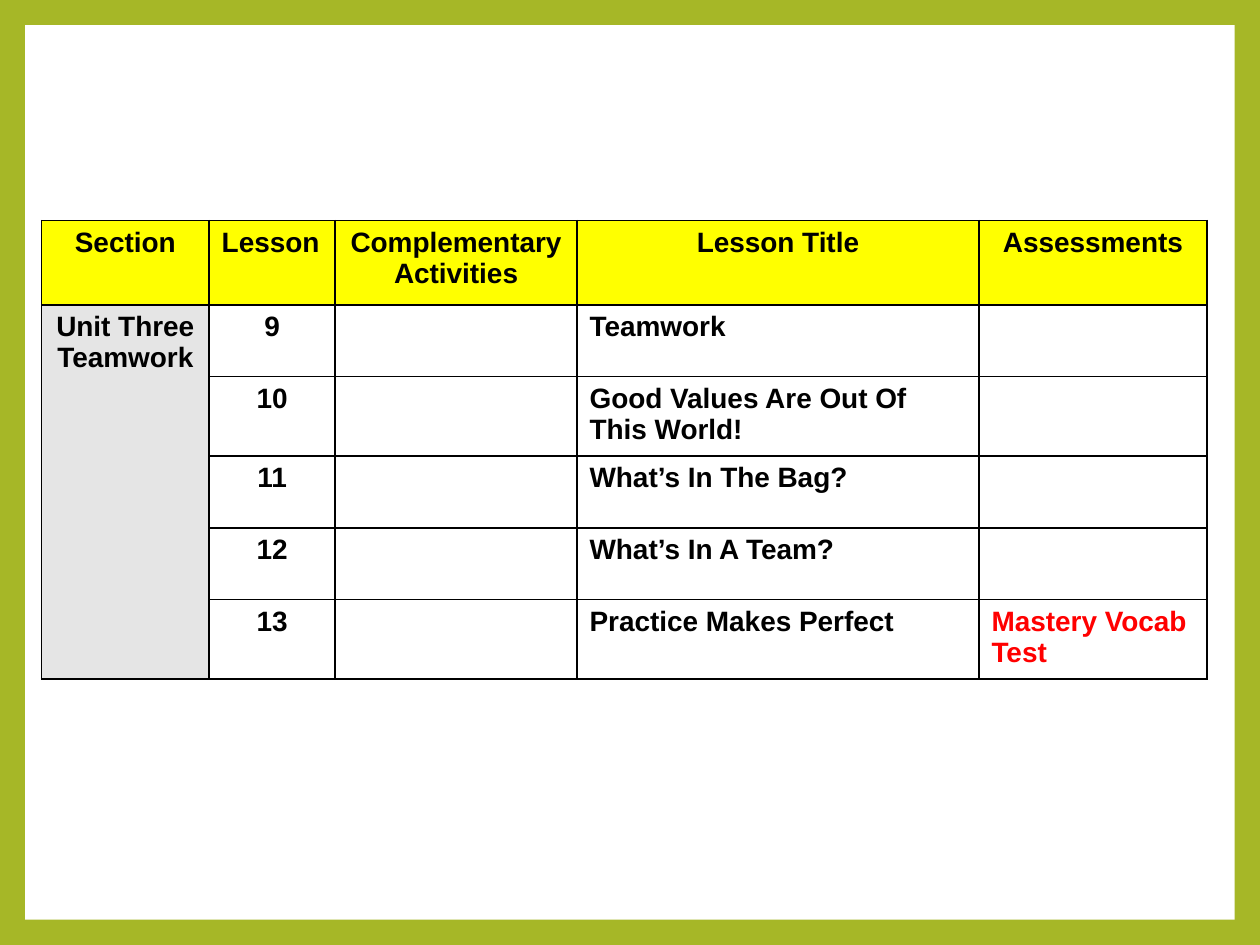
from lxml import etree
from pptx import Presentation
from pptx.dml.color import RGBColor
from pptx.enum.shapes import MSO_SHAPE
from pptx.enum.text import PP_ALIGN
from pptx.oxml.ns import qn
from pptx.util import Inches, Pt

RECTANGLE = MSO_SHAPE.RECTANGLE
LEFT, CENTER = PP_ALIGN.LEFT, PP_ALIGN.CENTER

GREEN = RGBColor(0xA6, 0xB7, 0x27)
WHITE = RGBColor(0xFF, 0xFF, 0xFF)
YELLOW = RGBColor(0xFF, 0xFF, 0x00)
GRAY = RGBColor(0xE5, 0xE5, 0xE5)
BLACK = RGBColor(0x00, 0x00, 0x00)
RED = RGBColor(0xFF, 0x00, 0x00)

PAGE_WIDTH, PAGE_HEIGHT, FRAME = 10, 7.5, 0.2
COLUMN_WIDTHS = [1.33, 1, 1.92, 3.19, 1.81]
ROW_HEIGHTS = [0.67, 0.57, 0.63, 0.57, 0.57, 0.63]
HEADINGS = ["Section", "Lesson", "Complementary Activities", "Lesson Title", "Assessments"]
UNIT = "Unit Three\nTeamwork"
LESSONS = [
    ("9", "Teamwork", ""),
    ("10", "Good Values Are Out Of This World!", ""),
    ("11", "What’s In The Bag?", ""),
    ("12", "What’s In A Team?", ""),
    ("13", "Practice Makes Perfect", "Mastery Vocab Test"),
]


def add_panel(page, left, top, width, height):
    panel = page.shapes.add_shape(
        RECTANGLE, Inches(left), Inches(top), Inches(width), Inches(height))
    panel.shadow.inherit = False
    panel.fill.solid()
    panel.fill.fore_color.rgb = WHITE
    panel.line.fill.background()


def add_borders(cell):
    properties = cell._tc.get_or_add_tcPr()
    for side in ("a:lnL", "a:lnR", "a:lnT", "a:lnB"):
        line = etree.SubElement(properties, qn(side), w=str(Pt(1)))
        solid = etree.SubElement(line, qn("a:solidFill"))
        etree.SubElement(solid, qn("a:srgbClr"), val=str(BLACK))


def style_cell(cell, fill):
    """Border the cell and fill it; a fill of None leaves it clear."""
    add_borders(cell)
    if fill is None:
        cell.fill.background()
    else:
        cell.fill.solid()
        cell.fill.fore_color.rgb = fill


def write_cell(cell, text, align, color=BLACK):
    cell.text_frame.text = text
    for para in cell.text_frame.paragraphs:
        para.alignment = align
        for span in para.runs:
            span.font.name = "Arial"
            span.font.size = Pt(16)
            span.font.bold = True
            span.font.color.rgb = color


def add_lesson_table(page, left, top, width, height):
    table = page.shapes.add_table(
        len(ROW_HEIGHTS), len(COLUMN_WIDTHS),
        Inches(left), Inches(top), Inches(width), Inches(height)).table
    table.first_row = False
    table.horz_banding = False
    for column, share in zip(table.columns, COLUMN_WIDTHS):
        column.width = Inches(width * share / sum(COLUMN_WIDTHS))
    for row, share in zip(table.rows, ROW_HEIGHTS):
        row.height = Inches(height * share / sum(ROW_HEIGHTS))

    for row_index, row in enumerate(table.rows):
        for column_index, cell in enumerate(row.cells):
            body_fill = GRAY if column_index == 0 else None
            style_cell(cell, YELLOW if row_index == 0 else body_fill)

    for column_index, heading in enumerate(HEADINGS):
        align = LEFT if heading == "Lesson" else CENTER
        write_cell(table.cell(0, column_index), heading, align)

    unit_cell = table.cell(1, 0)
    unit_cell.merge(table.cell(len(LESSONS), 0))
    write_cell(unit_cell, UNIT, CENTER)

    for row_index, (number, title, assessment) in enumerate(LESSONS, start=1):
        write_cell(table.cell(row_index, 1), number, CENTER)
        write_cell(table.cell(row_index, 3), title, LEFT)
        if assessment:
            write_cell(table.cell(row_index, 4), assessment, LEFT, RED)


def main():
    deck = Presentation()
    deck.slide_width, deck.slide_height = Inches(PAGE_WIDTH), Inches(PAGE_HEIGHT)
    page = deck.slides.add_slide(deck.slide_layouts[6])
    page.background.fill.solid()
    page.background.fill.fore_color.rgb = GREEN
    add_panel(page, FRAME, FRAME, PAGE_WIDTH - 2 * FRAME, PAGE_HEIGHT - 2 * FRAME)
    add_lesson_table(page, 0.33, 1.75, sum(COLUMN_WIDTHS), sum(ROW_HEIGHTS))
    deck.save("out.pptx")


if __name__ == "__main__":
    main()
